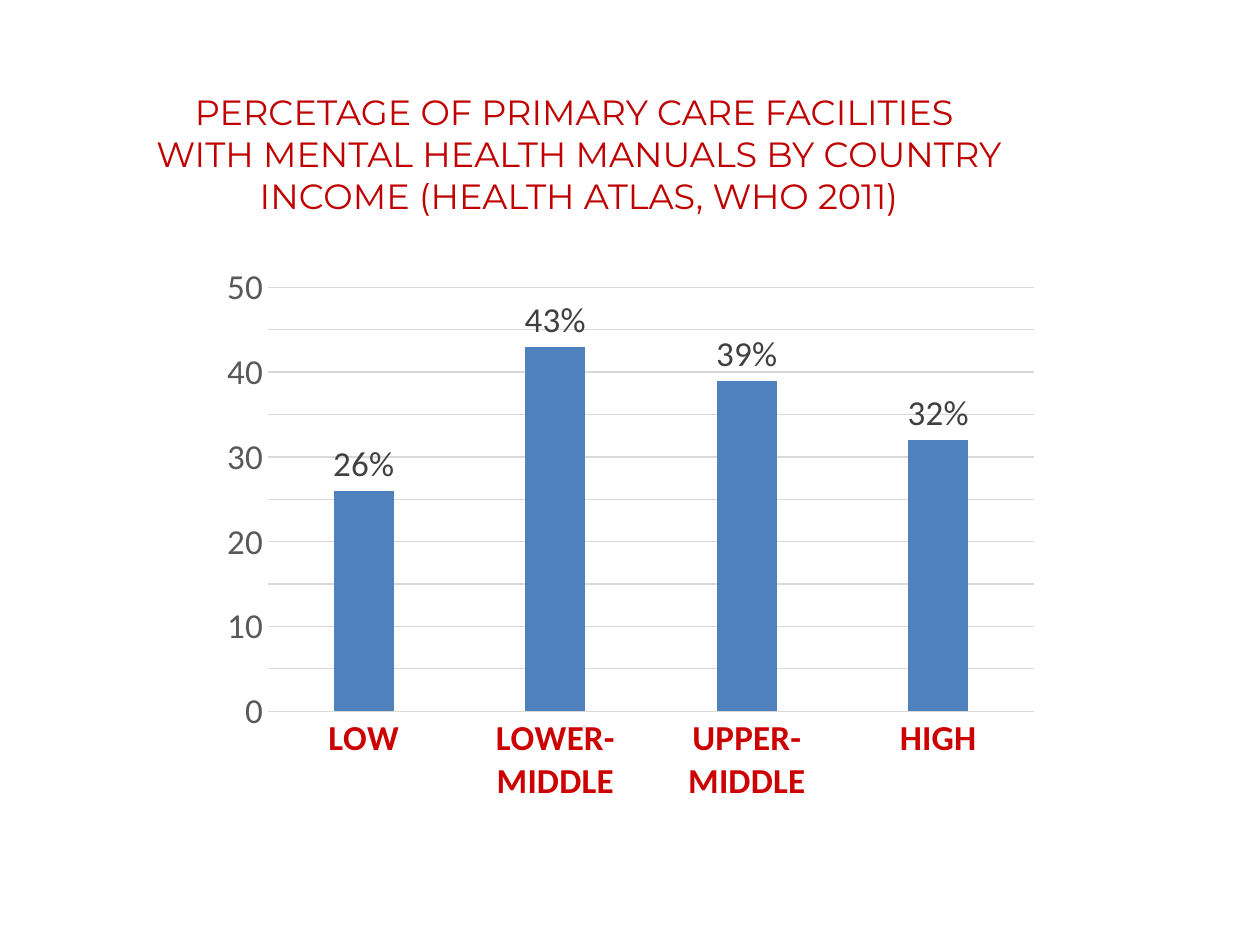
from pptx import Presentation
from pptx.chart.data import CategoryChartData
from pptx.dml.color import RGBColor
from pptx.enum.chart import XL_CHART_TYPE, XL_LABEL_POSITION, XL_TICK_MARK
from pptx.enum.text import MSO_ANCHOR, MSO_AUTO_SIZE, PP_ALIGN
from pptx.util import Inches, Pt

TITLE_LINES = [
    "PERCETAGE OF PRIMARY CARE FACILITIES ",
    "WITH MENTAL HEALTH MANUALS BY COUNTRY",
    "INCOME (HEALTH ATLAS, WHO 2011)",
]
FACILITIES = {"LOW": 26, "LOWER- MIDDLE": 43, "UPPER- MIDDLE": 39, "HIGH": 32}
TITLE_AREA = (0.81, 0.67, 7.57, 1.11)
CHART_AREA = (1.67, 2.02, 6.67, 4.44)
GRID_COLOR = "D9D9D9"


def color(value):
    """Turn a hex string into a colour."""
    return RGBColor.from_string(value)


def apply(target, **values):
    """Set each named attribute of the target."""
    for name, value in values.items():
        setattr(target, name, value)


def style_font(font, hex_color, name="Calibri", bold=False, size=20):
    """Give a font its face, size, weight and colour."""
    apply(font, name=name, size=Pt(size), bold=bold)
    font.color.rgb = color(hex_color)


def style_line(line):
    """Draw a thin grey line."""
    line.color.rgb = color(GRID_COLOR)
    line.width = Pt(0.75)


def place(area):
    """Convert left, top, width and height to lengths."""
    return [Inches(value) for value in area]


def add_title(page):
    """Fill and format the title placeholder."""
    title = page.shapes.title
    apply(title, **dict(zip(("left", "top", "width", "height"), place(TITLE_AREA))))
    frame = title.text_frame
    frame.text = "\n".join(TITLE_LINES)
    apply(frame, word_wrap=False, auto_size=MSO_AUTO_SIZE.SHAPE_TO_FIT_TEXT,
          vertical_anchor=MSO_ANCHOR.TOP)
    for para in frame.paragraphs:
        para.alignment = PP_ALIGN.CENTER
        for span in para.runs:
            style_font(span.font, "C00000", "Montserrat")


def add_facility_chart(page):
    """Add the column chart of facilities by country income."""
    data = CategoryChartData(number_format="General")
    data.categories = list(FACILITIES)
    data.add_series("Series 1", list(FACILITIES.values()))
    chart = page.shapes.add_chart(
        XL_CHART_TYPE.COLUMN_CLUSTERED, *place(CHART_AREA), data).chart
    apply(chart, has_legend=False, has_title=False)
    style_font(chart.font, "000000", size=10)

    plot = chart.plots[0]
    apply(plot, gap_width=219, overlap=-27, vary_by_categories=False,
          has_data_labels=True)
    fill = plot.series[0].format.fill
    fill.solid()
    fill.fore_color.rgb = color("4F81BD")
    labels = plot.data_labels
    apply(labels, show_value=True, number_format='0"%"',
          number_format_is_linked=False, position=XL_LABEL_POSITION.OUTSIDE_END)
    style_font(labels.font, "404040")

    categories, values = chart.category_axis, chart.value_axis
    for axis in (categories, values):
        apply(axis, major_tick_mark=XL_TICK_MARK.NONE,
              minor_tick_mark=XL_TICK_MARK.NONE)
    style_font(categories.tick_labels.font, "CC0000", bold=True)
    style_line(categories.format.line)
    style_font(values.tick_labels.font, "595959")
    values.format.line.fill.background()
    apply(values, minimum_scale=0, maximum_scale=50, major_unit=5,
          has_major_gridlines=True)
    style_line(values.major_gridlines.format.line)


def main():
    """Build and save the slide."""
    deck = Presentation()
    apply(deck, slide_width=Inches(10), slide_height=Inches(7.5))
    page = deck.slides.add_slide(deck.slide_layouts[5])
    add_title(page)
    add_facility_chart(page)
    deck.save("out.pptx")


if __name__ == "__main__":
    main()
